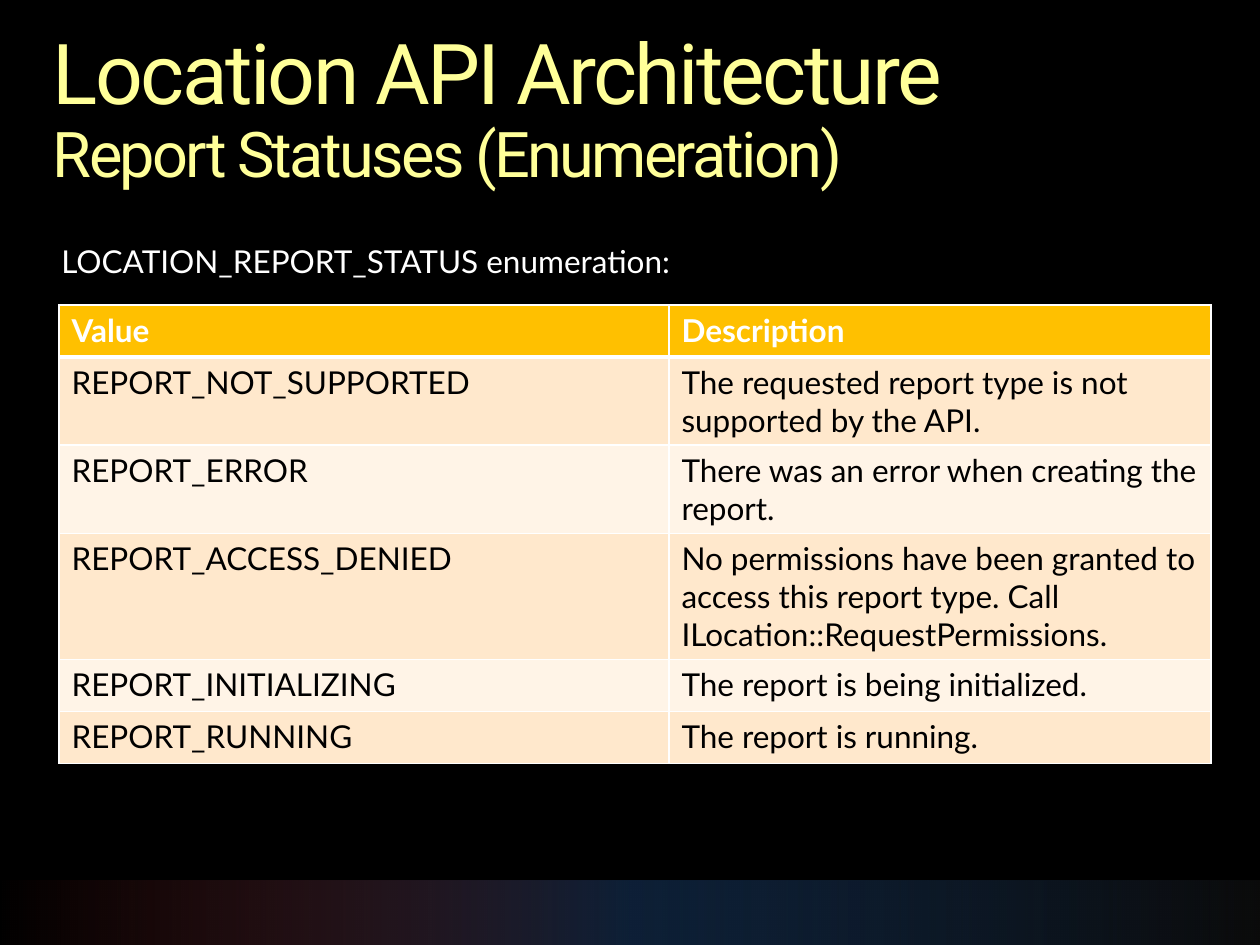
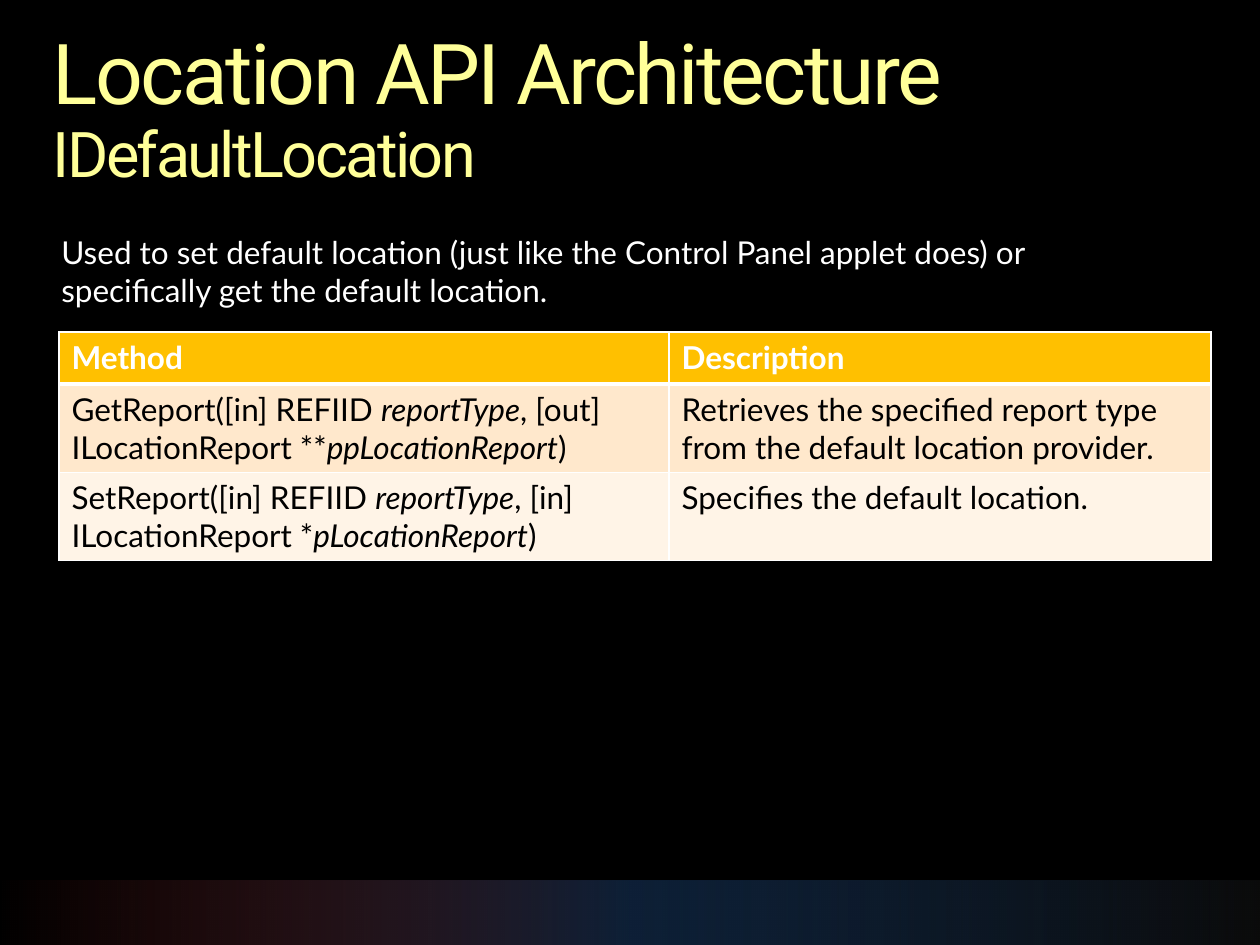
from dataclasses import dataclass

from lxml.etree import SubElement
from pptx import Presentation
from pptx.dml.color import RGBColor as RGB
from pptx.enum.shapes import MSO_SHAPE as Shape
from pptx.oxml.ns import qn
from pptx.util import Pt

TITLE = "Location API Architecture"

# A cell with several parts alternates between upright and italic text.
SLIDES = [
    dict(
        subtitle="Report Statuses (Enumeration)",
        intro="LOCATION_REPORT_STATUS enumeration:",
        intro_box=(49, 236, 1131, 50),
        table_top=305,
        rows=[
            ("Value", "Description"),
            ("REPORT_NOT_SUPPORTED", "The requested report type is not supported by the API."),
            ("REPORT_ERROR", "There was an error when creating the report."),
            ("REPORT_ACCESS_DENIED", "No permissions have been granted to access this report type. "
                                     "Call ILocation::RequestPermissions."),
            ("REPORT_INITIALIZING", "The report is being initialized."),
            ("REPORT_RUNNING", "The report is running."),
        ],
    ),
    dict(
        subtitle="IDefaultLocation",
        intro="Used to set default location (just like the Control Panel applet does) "
              "or specifically get the default location.",
        intro_box=(49, 227, 1131, 89),
        table_top=332,
        rows=[
            ("Method", "Description"),
            (("GetReport([in] REFIID ", "reportType", ", [out] ILocationReport **",
              "ppLocationReport", ")"),
             "Retrieves the specified report type from the default location provider."),
            (("SetReport([in] REFIID ", "reportType", ", [in] ILocationReport *",
              "pLocationReport", ")"),
             "Specifies the default location."),
        ],
    ),
]


@dataclass(frozen=True)
class Theme:
    background: str = "000000"
    title: str = "FFFF99"
    light: str = "FFFFFF"
    dark: str = "000000"
    header: str = "FFC000"
    stripes: tuple = ("FFE8CC", "FFF4E7")
    # Footer gradient from right to left: position %, colour, opacity %
    footer: tuple = ((0, "0D0D0D", 86), (50, "17375E", 58), (100, "CE3B37", 0))
    title_font: str = "Roboto"
    body_font: str = "Lato"
    title_size: int = 48
    subtitle_size: int = 36
    body_size: int = 18
    thin: int = 1
    thick: int = 3


THEME = Theme()
WIDTH, HEIGHT = 1260, 945
FOOTER_TOP = 881
TITLE_BOX = (53, 32, 1155, 160)
TABLE_LEFT, COLUMNS, ROW_HEIGHT = 59, (610, 542), 52


def px(n):
    return round(n * 914400 / 126)


def style(font, name, size, color, bold=False):
    font.name, font.size, font.bold = name, Pt(size), bold
    font.color.rgb = RGB.from_string(color)


def add_footer(slide):
    sp = slide.shapes.add_shape(Shape.RECTANGLE, 0, px(FOOTER_TOP),
                                px(WIDTH), px(HEIGHT - FOOTER_TOP))
    sp.shadow.inherit = False
    sp.line.fill.background()
    sp.fill.gradient()
    sp.fill.gradient_angle = 180
    stops = sp._element.spPr.find(qn("a:gradFill")).find(qn("a:gsLst"))
    for stop in list(stops):
        stops.remove(stop)
    for position, color, opacity in THEME.footer:
        stop = SubElement(stops, qn("a:gs"), pos=str(position * 1000))
        rgb = SubElement(stop, qn("a:srgbClr"), val=color)
        SubElement(rgb, qn("a:alpha"), val=str(opacity * 1000))


def add_text_box(slide, box):
    tf = slide.shapes.add_textbox(*map(px, box)).text_frame
    tf.word_wrap = True
    return tf


def add_title(slide, subtitle):
    tf = add_text_box(slide, TITLE_BOX)
    tf.margin_left = tf.margin_top = tf.margin_right = tf.margin_bottom = 0
    p = tf.paragraphs[0]
    p.line_spacing = 0.9
    for text, size in ((TITLE, THEME.title_size), (subtitle, THEME.subtitle_size)):
        if p.runs:
            p.add_line_break()
        r = p.add_run()
        r.text = text
        style(r.font, THEME.title_font, size, THEME.title)
        r._r.get_or_add_rPr().set("spc", "-150")


def add_intro(slide, text, box):
    p = add_text_box(slide, box).paragraphs[0]
    p.text = text
    style(p.font, THEME.body_font, THEME.body_size, THEME.light)


def set_borders(cell, top, bottom):
    tcPr = cell._tc.get_or_add_tcPr()
    for side, width in (("L", THEME.thin), ("R", THEME.thin), ("T", top), ("B", bottom)):
        ln = SubElement(tcPr, qn(f"a:ln{side}"), w=str(Pt(width)))
        SubElement(SubElement(ln, qn("a:solidFill")), qn("a:srgbClr"), val=THEME.light)


def fill_cell(cell, content, row):
    is_header = row == 0
    set_borders(cell, THEME.thick if row == 1 else THEME.thin,
                THEME.thick if is_header else THEME.thin)
    cell.fill.solid()
    cell.fill.fore_color.rgb = RGB.from_string(
        THEME.header if is_header else THEME.stripes[(row - 1) % 2])
    p = cell.text_frame.paragraphs[0]
    style(p.font, THEME.body_font, THEME.body_size,
          THEME.light if is_header else THEME.dark, is_header)
    parts = (content,) if isinstance(content, str) else content
    for i, part in enumerate(parts):
        r = p.add_run()
        r.text = part
        if i % 2:
            r.font.italic = True


def add_grid(slide, rows, top):
    table = slide.shapes.add_table(
        len(rows), len(COLUMNS), px(TABLE_LEFT), px(top),
        px(sum(COLUMNS)), px(ROW_HEIGHT * len(rows))).table
    for column, width in zip(table.columns, COLUMNS):
        column.width = px(width)
    for i, row in enumerate(rows):
        for j, content in enumerate(row):
            fill_cell(table.cell(i, j), content, i)


def main():
    prs = Presentation()
    prs.slide_width, prs.slide_height = px(WIDTH), px(HEIGHT)
    for content in SLIDES:
        s = prs.slides.add_slide(prs.slide_layouts[6])
        s.background.fill.solid()
        s.background.fill.fore_color.rgb = RGB.from_string(THEME.background)
        add_footer(s)
        add_title(s, content["subtitle"])
        add_grid(s, content["rows"], content["table_top"])
        add_intro(s, content["intro"], content["intro_box"])
    prs.save("out.pptx")


if __name__ == "__main__":
    main()
